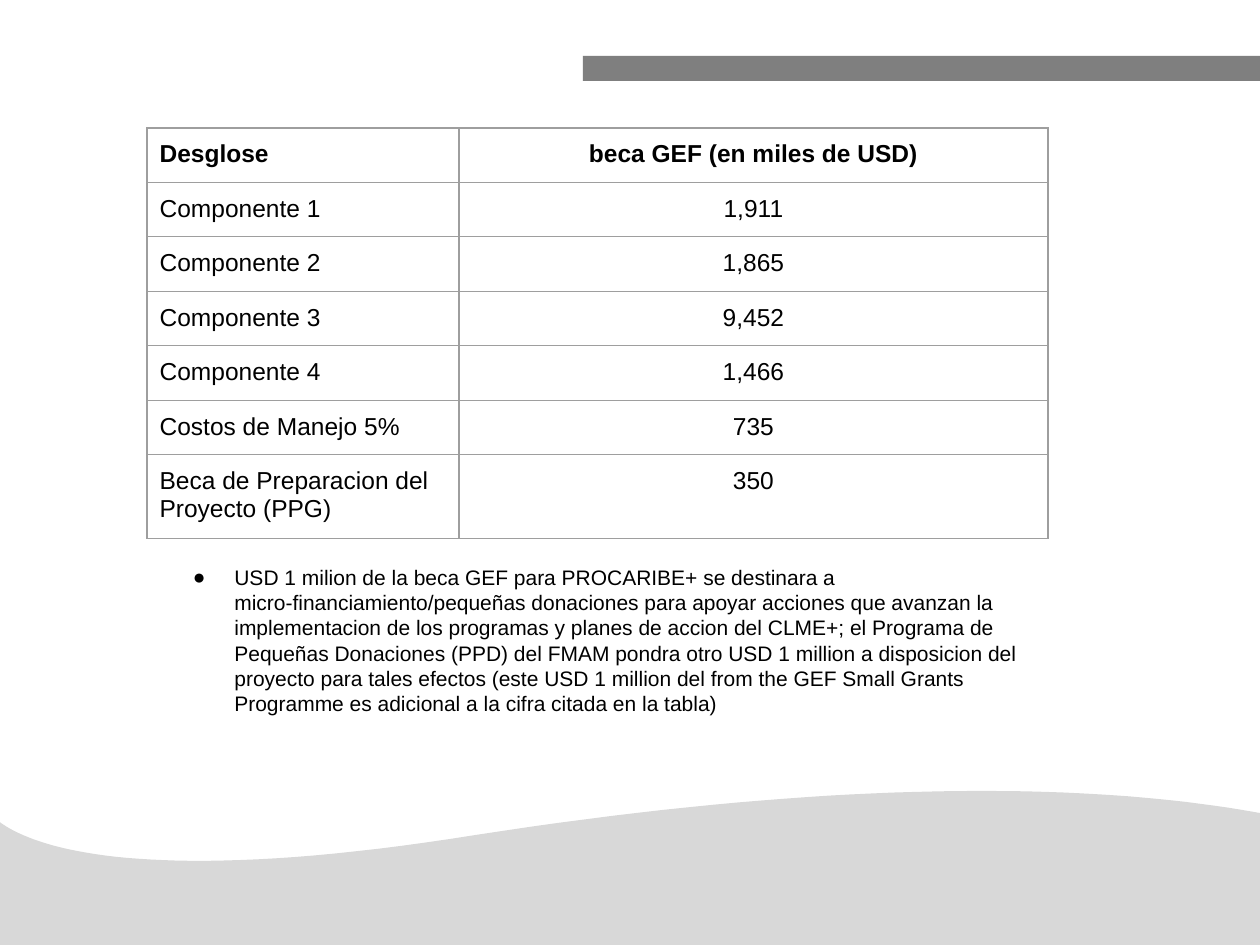
"""Build the slide with the GEF grant breakdown table and its footnote."""
from lxml import etree
from pptx import Presentation, util as u
from pptx.dml.color import RGBColor
from pptx.enum import shapes, text
from pptx.oxml.ns import qn

PX = 914400 / 126


def px(n):
    return u.Emu(round(n * PX))


def paint(fill, colour):
    fill.solid()
    fill.fore_color.rgb = RGBColor.from_string(colour)


deck = Presentation()
deck.slide_width, deck.slide_height = px(1260), px(945)
slide = deck.slides.add_slide(deck.slide_layouts[6])

bar = slide.shapes.add_shape(shapes.MSO_SHAPE.RECTANGLE, px(583), px(56), px(680), px(25))

FINE = 10
crest = [(1265, 814), (1105, 784), (856, 776), (476, 835)]
trough = [(476, 835), (126, 891), (24, 842), (-3, 820)]
edge = []
for curve in (crest, trough):
    for step in range(41):
        t = step / 40
        weights = ((1 - t) ** 3, 3 * t * (1 - t) ** 2, 3 * t * t * (1 - t), t ** 3)
        edge.append([FINE * sum(w * p[axis] for w, p in zip(weights, curve)) for axis in (0, 1)])
outline = slide.shapes.build_freeform(1265 * FINE, 945 * FINE, scale=PX / FINE)
outline.add_line_segments(edge + [(-3 * FINE, 945 * FINE)], close=True)
wave = outline.convert_to_shape()

for band, colour in ((bar, "7F7F7F"), (wave, "D8D8D8")):
    paint(band.fill, colour)
    band.line.fill.background()
    band.shadow.inherit = False

breakdown = [
    ("Desglose", "beca GEF (en miles de USD)"),
    ("Componente 1", "1,911"),
    ("Componente 2", "1,865"),
    ("Componente 3", "9,452"),
    ("Componente 4", "1,466"),
    ("Costos de Manejo 5%", "735"),
    ("Beca de Preparacion del Proyecto (PPG)", "350"),
]
grid = slide.shapes.add_table(len(breakdown), 2, px(147), px(128), px(901), px(411)).table
for column, width in zip(grid.columns, (312, 589)):
    column.width = px(width)
for r, entries in enumerate(breakdown):
    grid.rows[r].height = px(84) if r == len(breakdown) - 1 else px(327 / 6)
    for c, entry in enumerate(entries):
        cell = grid.cell(r, c)
        cell.margin_left = cell.margin_right = cell.margin_top = cell.margin_bottom = u.Inches(0.1)
        cell.text_frame.text = entry
        label = cell.text_frame.paragraphs[0]
        label.alignment = text.PP_ALIGN.CENTER if c else text.PP_ALIGN.LEFT
        font = label.runs[0].font
        font.name, font.size, font.bold = "Arial", u.Pt(14), r == 0
        paint(font.fill, "000000")
        props = cell._tc.get_or_add_tcPr()
        for side in ("a:lnL", "a:lnR", "a:lnT", "a:lnB"):
            border = etree.SubElement(props, qn(side), w=str(u.Pt(0.75)))
            solid = etree.SubElement(border, qn("a:solidFill"))
            etree.SubElement(solid, qn("a:srgbClr"), val="9E9E9E")
        cell.fill.background()

note = slide.shapes.add_textbox(px(159), px(552), px(911), px(204)).text_frame
note.word_wrap = True
note.margin_left = note.margin_right = note.margin_top = note.margin_bottom = u.Inches(0.1)
note.text = (
    "USD 1 milion de la beca GEF para PROCARIBE+ se destinara a "
    "micro-financiamiento/pequeñas donaciones para apoyar acciones que avanzan la "
    "implementacion de los programas y planes de accion del CLME+; el Programa de "
    "Pequeñas Donaciones (PPD) del FMAM pondra otro USD 1 million a disposicion del "
    "proyecto para tales efectos (este USD 1 million del from the GEF Small Grants "
    "Programme es adicional a la cifra citada en la tabla)"
)
remark = note.paragraphs[0]
indent = remark._p.get_or_add_pPr()
indent.set("marL", str(u.Inches(0.5)))
indent.set("indent", str(u.Inches(-0.33)))
bullet_colour = etree.SubElement(indent, qn("a:buClr"))
etree.SubElement(bullet_colour, qn("a:srgbClr"), val="000000")
etree.SubElement(indent, qn("a:buFont"), typeface="Arial")
etree.SubElement(indent, qn("a:buChar"), char="●")
font = remark.runs[0].font
font.name, font.size = "Arial", u.Pt(12)
paint(font.fill, "000000")

deck.save("out.pptx")
